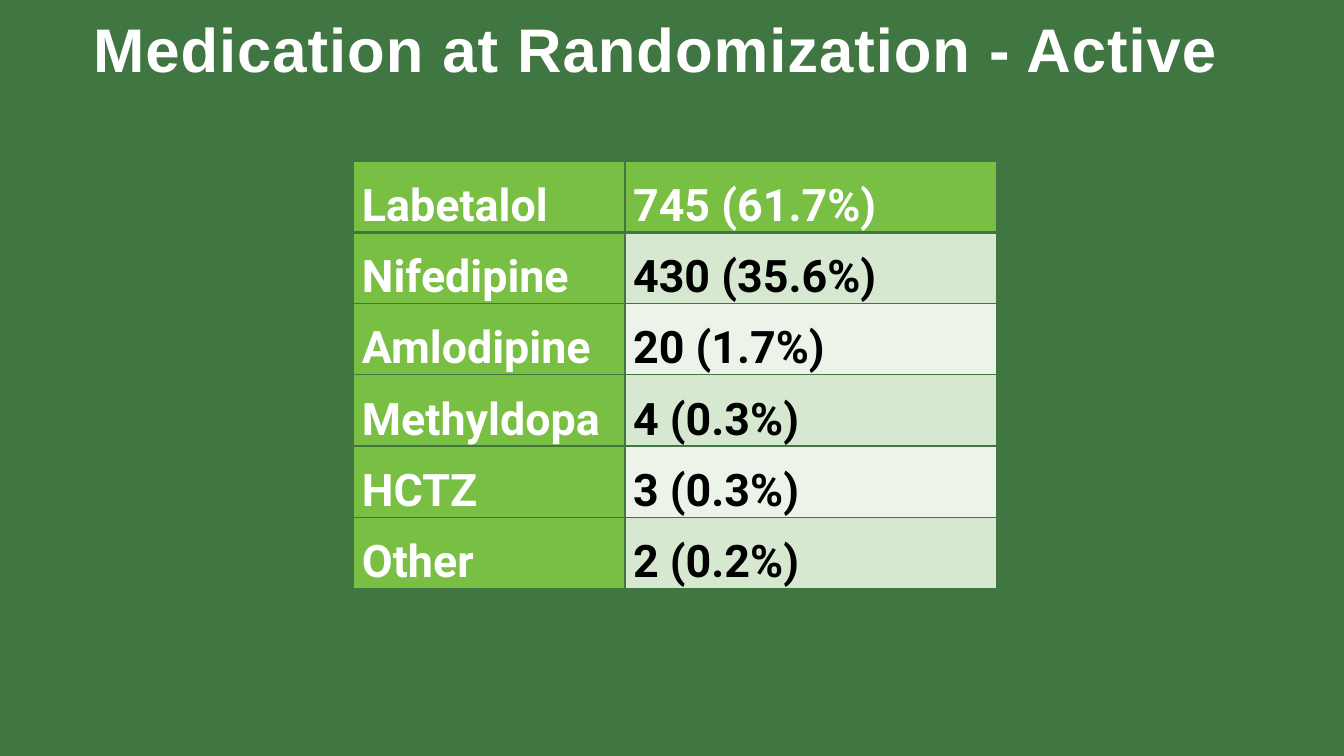
from lxml import etree
from pptx import Presentation
from pptx.dml.color import RGBColor
from pptx.enum.text import MSO_ANCHOR, MSO_AUTO_SIZE, PP_ALIGN
from pptx.oxml.ns import qn
from pptx.util import Inches, Pt

TOP, BOTTOM = MSO_ANCHOR.TOP, MSO_ANCHOR.BOTTOM
CENTER, LEFT = PP_ALIGN.CENTER, PP_ALIGN.LEFT
NO_FIT = MSO_AUTO_SIZE.NONE

FOREST = RGBColor(0x40, 0x76, 0x42)
LEAF = RGBColor(0x78, 0xBF, 0x43)
PALE = RGBColor(0xD6, 0xE8, 0xCF)
PALEST = RGBColor(0xEC, 0xF4, 0xE9)
WHITE = RGBColor(0xFF, 0xFF, 0xFF)
BLACK = RGBColor(0, 0, 0)

MEDICATIONS = [
    ("Labetalol", "745 (61.7%)"),
    ("Nifedipine", "430 (35.6%)"),
    ("Amlodipine", "20 (1.7%)"),
    ("Methyldopa", "4 (0.3%)"),
    ("HCTZ", "3 (0.3%)"),
    ("Other", "2 (0.2%)"),
]


def write(frame, text, *, font, size, color, align=LEFT, after=0, spacing=0):
    """Put one bold, formatted paragraph into a text frame."""
    paragraph = frame.paragraphs[0]
    paragraph.alignment = align
    paragraph.space_before = Pt(0)
    paragraph.space_after = Pt(after)
    run = paragraph.add_run()
    run.text = text
    run.font.name = font
    run.font.size = Pt(size)
    run.font.bold = True
    run.font.color.rgb = color
    if spacing:
        run.font._element.set("spc", str(round(spacing * 100)))


def add_border(cell, side, width):
    line = etree.SubElement(cell._tc.get_or_add_tcPr(), qn(f"a:ln{side}"),
                            w=str(Pt(width)))
    fill = etree.SubElement(line, qn("a:solidFill"))
    etree.SubElement(fill, qn("a:srgbClr"), val=str(FOREST))


class SlideBuilder:
    title_font = "Arial"
    table_font = "Roboto"

    def __init__(self, slide):
        self.slide = slide

    def background(self, color):
        fill = self.slide.background.fill
        fill.solid()
        fill.fore_color.rgb = color

    def title(self, text, left, top, width, height):
        heading = self.slide.shapes.title
        heading.left, heading.top = Inches(left), Inches(top)
        heading.width, heading.height = Inches(width), Inches(height)
        frame = heading.text_frame
        frame.auto_size = NO_FIT
        frame.word_wrap = True
        frame.vertical_anchor = TOP
        frame.margin_left = frame.margin_bottom = 0
        frame.margin_top, frame.margin_right = Inches(0.11), Inches(0.36)
        write(frame, text, font=self.title_font, size=44, color=WHITE,
              align=CENTER, spacing=0.7)

    def cell(self, cell, text, fill, color, after=0, bottom_line=1):
        cell.margin_left = cell.margin_right = Inches(0.08)
        cell.margin_top = cell.margin_bottom = 0
        cell.vertical_anchor = BOTTOM
        for side in "LRT":
            add_border(cell, side, 1)
        add_border(cell, "B", bottom_line)
        cell.fill.solid()
        cell.fill.fore_color.rgb = fill
        write(cell.text_frame, text, font=self.table_font, size=32,
              color=color, after=after)

    def table(self, rows, left, top, widths, height):
        grid = self.slide.shapes.add_table(
            len(rows), len(widths), Inches(left), Inches(top),
            Inches(sum(widths)), Inches(height)).table
        for column, width in zip(grid.columns, widths):
            column.width = Inches(width)
        for index, (drug, count) in enumerate(rows):
            first = index == 0
            line = 3 if first else 1
            band = LEAF if first else PALE if index % 2 else PALEST
            self.cell(grid.cell(index, 0), drug, LEAF, WHITE, bottom_line=line)
            self.cell(grid.cell(index, 1), count, band,
                      WHITE if first else BLACK,
                      after=0 if first else 1.5, bottom_line=line)


def main():
    deck = Presentation()
    deck.slide_width, deck.slide_height = Inches(13.33), Inches(7.5)
    title_only = deck.slide_layouts[5]
    builder = SlideBuilder(deck.slides.add_slide(title_only))

    # Background and heading
    builder.background(FOREST)
    builder.title("Medication at Randomization - Active", 0.71, 0, 11.95, 0.7)

    # Medication counts
    builder.table(MEDICATIONS, 3.51, 1.6, (2.69, 3.68), 4.24)

    deck.save("out.pptx")


if __name__ == "__main__":
    main()
